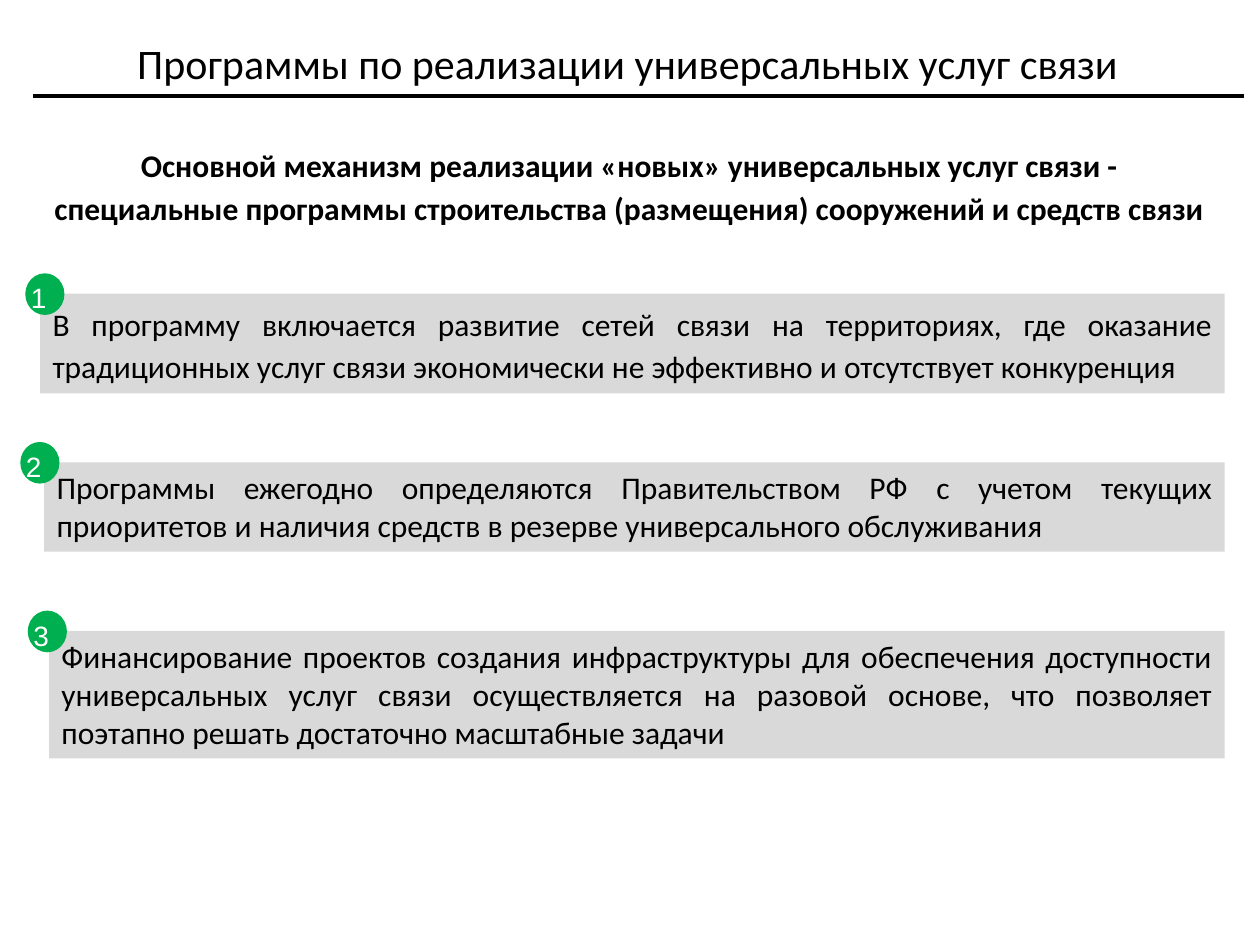
from lxml.etree import SubElement
from pptx import Presentation
from pptx.dml.color import RGBColor
from pptx.enum.shapes import MSO_CONNECTOR, MSO_SHAPE
from pptx.enum.text import MSO_ANCHOR, PP_ALIGN
from pptx.oxml.ns import qn
from pptx.util import Cm, Pt

COLORS = {"text": "000000", "panel": "D9D9D9", "badge": "00B050", "number": "FFFFFF"}


def write(shape, text, size, align, color="text", font="Calibri", bold=False,
          spacing=None, anchor=MSO_ANCHOR.TOP):
    frame = shape.text_frame
    frame.word_wrap = True
    frame.vertical_anchor = anchor
    paragraph = frame.paragraphs[0]
    paragraph.alignment = align
    paragraph.line_spacing = spacing
    run = paragraph.add_run()
    run.text = text
    run.font.size = Pt(size)
    run.font.name = font
    run.font.bold = bold
    run.font.color.rgb = RGBColor.from_string(COLORS[color])


def add_filled(kind, left, top, width, height, color):
    shape = slide.shapes.add_shape(kind, Cm(left), Cm(top), Cm(width), Cm(height))
    shape.shadow.inherit = False
    shape.fill.solid()
    shape.fill.fore_color.rgb = RGBColor.from_string(COLORS[color])
    shape.line.fill.background()
    return shape


presentation = Presentation()
presentation.slide_width = Cm(25.4)
presentation.slide_height = Cm(19.05)
slide = presentation.slides.add_slide(presentation.slide_layouts[6])

title = slide.shapes.add_textbox(Cm(0.99), Cm(0.71), Cm(23.52), Cm(1.12))
write(title, "Программы по реализации универсальных услуг связи ", 24,
      PP_ALIGN.CENTER, anchor=MSO_ANCHOR.MIDDLE)

title_rule = slide.shapes.add_connector(
    MSO_CONNECTOR.STRAIGHT, Cm(0.66), Cm(1.93), Cm(25.07), Cm(1.93))
title_rule.line.color.rgb = RGBColor.from_string(COLORS["text"])
title_rule.line.width = Pt(2.25)
SubElement(title_rule.element.spPr, qn("a:effectLst"))

mechanism = slide.shapes.add_textbox(Cm(0.69), Cm(2.72), Cm(24), Cm(2.01))
write(mechanism, "Основной механизм реализации «новых» универсальных услуг связи - "
      "специальные программы строительства (размещения) сооружений и средств связи",
      18, PP_ALIGN.CENTER, bold=True, spacing=1.13)

PANEL_RIGHT = 24.69
FIRST_TOP = 5.92
STEP = 3.4
BADGE_RISE = 0.41
principles = [
    (0.81, 2.01, 0.51, 1.13,
     "В программу включается развитие сетей связи на территориях, где оказание "
     "традиционных услуг связи экономически не эффективно и отсутствует конкуренция"),
    (0.89, 1.8, 0.41, None,
     "Программы ежегодно определяются Правительством РФ с учетом текущих "
     "приоритетов и наличия средств в резерве универсального обслуживания"),
    (0.99, 2.57, 0.56, None,
     "Финансирование проектов создания инфраструктуры для обеспечения доступности "
     "универсальных услуг связи осуществляется на разовой основе, что позволяет "
     "поэтапно решать достаточно масштабные задачи"),
]

for index, (left, height, badge_left, spacing, text) in enumerate(principles):
    top = FIRST_TOP + index * STEP
    panel = add_filled(MSO_SHAPE.RECTANGLE, left, top, PANEL_RIGHT - left, height, "panel")
    write(panel, text, 18, PP_ALIGN.JUSTIFY, spacing=spacing)

    badge = add_filled(MSO_SHAPE.OVAL, badge_left, top - BADGE_RISE, 0.79, 0.84, "badge")
    frame = badge.text_frame
    frame.margin_left = frame.margin_right = frame.margin_top = frame.margin_bottom = 0
    write(badge, str(index + 1), 16, PP_ALIGN.LEFT, color="number", font="Arial",
          spacing=Pt(20))

presentation.save("out.pptx")
